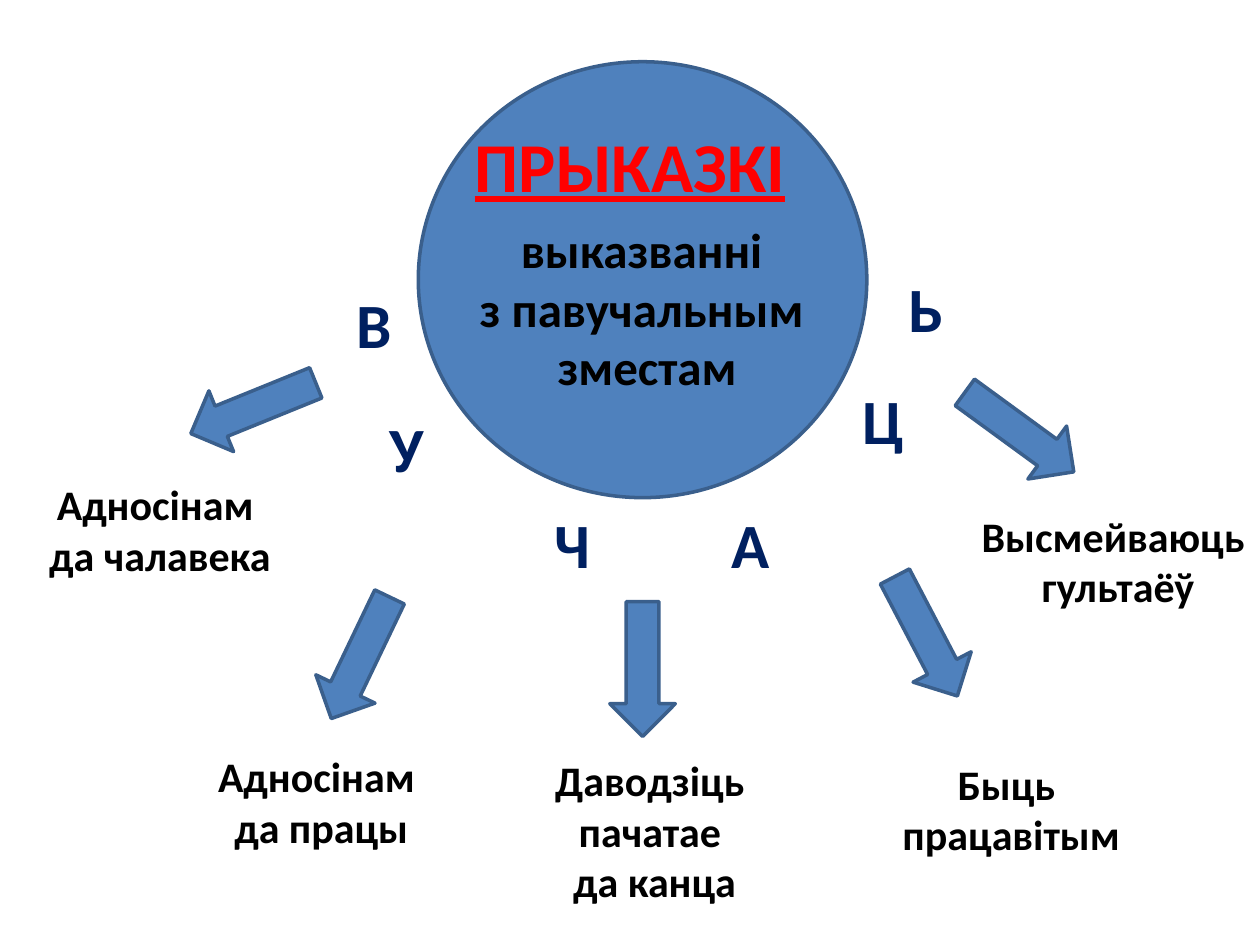
from pptx import Presentation
from pptx.dml.color import RGBColor
from pptx.enum.shapes import MSO_SHAPE
from pptx.enum.text import MSO_AUTO_SIZE, PP_ALIGN
from pptx.util import Inches, Pt

BLUE = RGBColor(0x4F, 0x81, 0xBD)
OUTLINE = RGBColor(0x3A, 0x5F, 0x8C)
NAVY = RGBColor(0x00, 0x20, 0x60)
RED = RGBColor(0xFF, 0x00, 0x00)
BLACK = RGBColor(0x00, 0x00, 0x00)

# Letters around the circle: text, left, top, width
LETTERS = [
    ("В", 2.73, 2.22, 0.48),
    ("У", 2.99, 3.2, 0.48),
    ("Ч", 4.3, 3.96, 0.48),
    ("А", 5.71, 3.96, 0.51),
    ("Ц", 6.75, 2.98, 0.53),
    ("Ь", 7.11, 2.09, 0.48),
]

# Arrows: centre x, centre y, direction in degrees clockwise from the right
ARROWS = [
    (2.01, 3.24, 157.9),
    (2.86, 5.22, 115.6),
    (5.1, 5.31, 90),
    (7.35, 5.05, 62.4),
    (8.09, 3.43, 36.1),
]

# Lessons at the arrow tips: lines, left, top, width
LESSONS = [
    (["Адносінам ", "да чалавека"], 0.28, 3.75, 1.98),
    (["Адносінам ", "да працы"], 1.62, 5.91, 1.86),
    (["Даводзіць ", "пачатае ", "да канца"], 4.3, 5.94, 1.79),
    (["Быць ", "працавітым"], 7.05, 5.97, 1.95),
    (["Высмейваюць", " гультаёў"], 7.68, 4, 2.31),
]


class Diagram:
    """Holds the slide and the style shared by its elements."""

    font = "Calibri"
    fill = BLUE
    line = OUTLINE
    line_width = Pt(2)
    arrow_size = (1.07, 0.52)

    def __init__(self, slide):
        self.slide = slide

    def shape(self, kind, left, top, width, height):
        sp = self.slide.shapes.add_shape(
            kind, Inches(left), Inches(top), Inches(width), Inches(height))
        sp.shadow.inherit = False
        sp.fill.solid()
        sp.fill.fore_color.rgb = self.fill
        sp.line.color.rgb = self.line
        sp.line.width = self.line_width
        return sp

    def arrow(self, x, y, angle):
        """Draw a block arrow centred on x, y."""
        width, height = self.arrow_size
        sp = self.shape(MSO_SHAPE.RIGHT_ARROW, x - width / 2, y - height / 2,
                        width, height)
        sp.rotation = angle

    def text(self, lines, left, top, width, height, *, size, color=BLACK,
             align=PP_ALIGN.CENTER, underline=False):
        """Add a bold text box with one paragraph per line."""
        sp = self.slide.shapes.add_textbox(
            Inches(left), Inches(top), Inches(width), Inches(height))
        tf = sp.text_frame
        tf.word_wrap = False
        tf.auto_size = MSO_AUTO_SIZE.SHAPE_TO_FIT_TEXT
        for i, line in enumerate(lines):
            p = tf.add_paragraph() if i else tf.paragraphs[0]
            p.alignment = align
            r = p.add_run()
            r.text = line
            r.font.name = self.font
            r.font.size = Pt(size)
            r.font.bold = True
            r.font.underline = underline
            r.font.color.rgb = color


def main():
    prs = Presentation()
    prs.slide_width, prs.slide_height = Inches(10), Inches(7.5)
    diagram = Diagram(prs.slides.add_slide(prs.slide_layouts[6]))

    diagram.shape(MSO_SHAPE.OVAL, 3.32, 0.49, 3.56, 3.46)
    diagram.text(["ПРЫКАЗКІ"], 3.67, 0.92, 2.67, 0.77, size=40, color=RED,
                 align=PP_ALIGN.LEFT, underline=True)
    diagram.text(["выказванні ", "з павучальным ", "зместам"],
                 3.69, 1.69, 2.89, 1.51, size=28)

    for letter, left, top, width in LETTERS:
        diagram.text([letter], left, top, width, 0.71, size=36, color=NAVY,
                     align=PP_ALIGN.LEFT)
    for x, y, angle in ARROWS:
        diagram.arrow(x, y, angle)
    for lines, left, top, width in LESSONS:
        diagram.text(lines, left, top, width, 0.11 + 0.4 * len(lines), size=24)

    prs.save("out.pptx")


if __name__ == "__main__":
    main()
